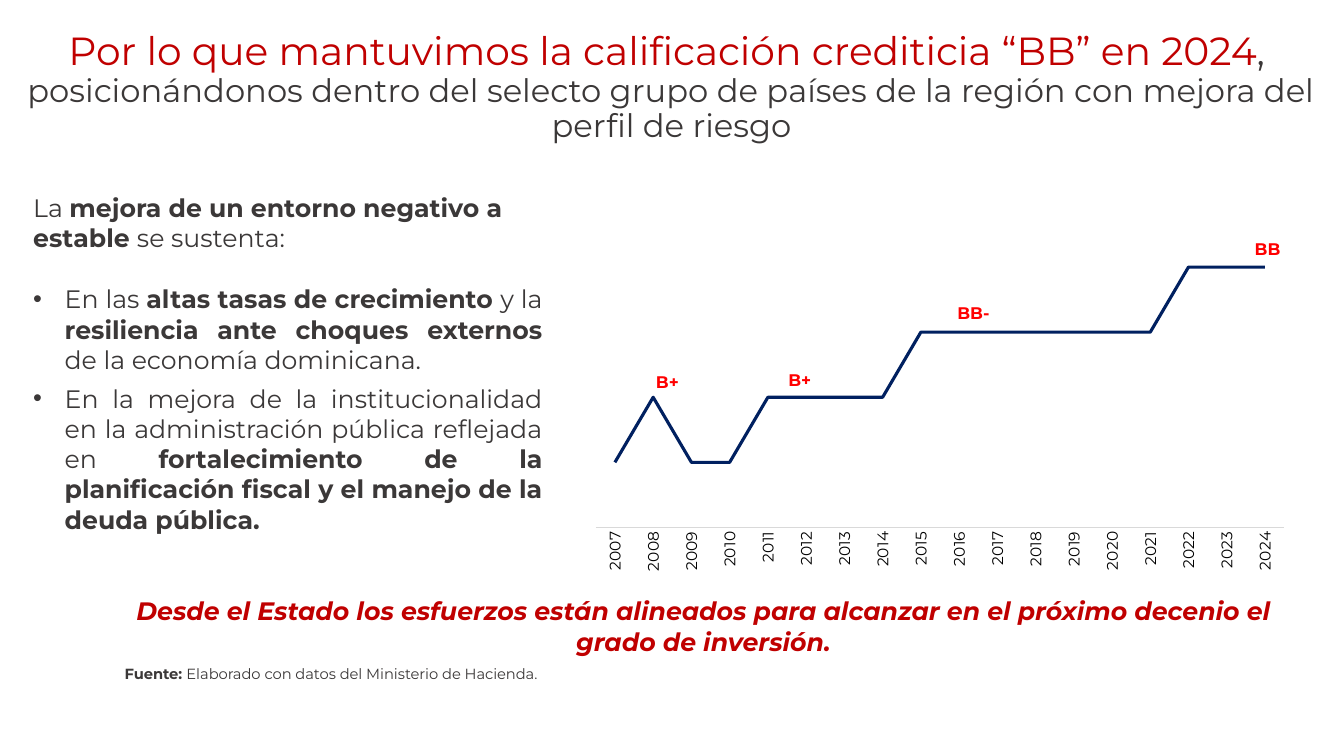
from lxml import etree
from pptx import Presentation
from pptx.chart.data import CategoryChartData
from pptx.dml.color import RGBColor
from pptx.enum import chart as ch
from pptx.enum.text import PP_ALIGN
from pptx.oxml import ns
from pptx.util import Pt

FONT = "Montserrat"
COLORS = {"crimson": "C00000", "gray": "3B3838", "red": "FF0000",
          "navy": "002060", "axis": "D9D9D9", "black": "000000"}


def rgb(name):
    return RGBColor.from_string(COLORS[name])


def add_text(box, paragraphs, size, color, align=None, bold=None, italic=None):
    """Add a text box; each paragraph is a list of (text, bold) runs."""
    frame = slide.shapes.add_textbox(*map(Pt, box)).text_frame
    frame.word_wrap = True
    for i, runs in enumerate(paragraphs):
        paragraph = frame.paragraphs[0] if i == 0 else frame.add_paragraph()
        paragraph.alignment = align
        font = paragraph.font
        font.name, font.size, font.bold, font.italic = FONT, Pt(size), bold, italic
        font.color.rgb = rgb(color)
        for content, run_bold in runs:
            run = paragraph.add_run()
            run.text = content
            if run_bold:
                run.font.bold = True
    return frame


prs = Presentation()
prs.slide_width, prs.slide_height = Pt(960), Pt(540)
slide = prs.slides.add_slide(prs.slide_layouts[6])

# Title
title = add_text((8.6, 19.4, 942.5, 61.2), [
    [("Por lo que mantuvimos la calificación crediticia “BB” en 2024", False), (", ", False)],
    [("posicionándonos dentro del selecto grupo de países de la región "
      "con mejora del perfil de riesgo", False)],
], 23, "gray", PP_ALIGN.CENTER)
for paragraph in title.paragraphs:
    paragraph.line_spacing = 0.9
headline = title.paragraphs[0]
headline.font.size = Pt(28)
headline.runs[0].font.color.rgb = rgb("crimson")

# Source and reasons
add_text((82, 471.6, 744.5, 20.2), [
    [("Fuente: ", True), ("Elaborado con datos del Ministerio de Hacienda.", False)],
], 10.5, "gray")

reasons = add_text((16.6, 133.9, 378, 253.4), [
    [("La ", False), ("mejora de un entorno negativo a estable ", True), ("se sustenta:", False)],
    [("En las ", False), ("altas tasas de crecimiento ", True), ("y la ", False),
     ("resiliencia ante choques externos ", True), ("de la economía dominicana.", False)],
    [("En la mejora de la institucionalidad en la administración pública reflejada en", False),
     (" fortalecimiento de la planificación fiscal y el manejo de la deuda pública.", True)],
], 18, "gray")
for paragraph in reasons.paragraphs[1:]:
    paragraph.alignment = PP_ALIGN.JUSTIFY
    properties = paragraph._p.get_or_add_pPr()
    properties.set("marL", str(Pt(22.5)))
    properties.set("indent", str(-Pt(22.5)))
    bullet_font = etree.Element(ns.qn("a:buFont"), typeface="Arial")
    bullet = etree.Element(ns.qn("a:buChar"), char="•")
    properties.find(ns.qn("a:defRPr")).addprevious(bullet_font)
    bullet_font.addnext(bullet)
reasons.paragraphs[1].space_before = Pt(22)
reasons.paragraphs[1].space_after = Pt(6)

add_text((64, 421.9, 877, 51.1), [
    [("Desde el Estado los esfuerzos están alineados para alcanzar "
      "en el próximo decenio el grado de inversión.", False)],
], 18, "crimson", PP_ALIGN.CENTER, True, True)

# Credit rating by year
ratings = CategoryChartData()
ratings.categories = [str(year) for year in range(2007, 2025)]
ratings.add_series("Series 1", [25, 50] + [25] * 2 + [50] * 4 + [75] * 7 + [100] * 3)
chart = slide.shapes.add_chart(ch.XL_CHART_TYPE.LINE, Pt(419), Pt(92.2), Pt(509), Pt(329.8),
                               ratings).chart
chart.has_legend = chart.has_title = False
chart.font.name, chart.font.size = FONT, Pt(11)
chart.font.color.rgb = rgb("black")
chart.plots[0].vary_by_categories = False

rating_line = chart.plots[0].series[0]
rating_line.smooth = False
rating_line.marker.style = ch.XL_MARKER_STYLE.NONE
rating_line.format.line.color.rgb = rgb("navy")
rating_line.format.line.width = Pt(2.25)

levels = chart.value_axis
levels.minimum_scale, levels.maximum_scale, levels.major_unit = 0, 125, 25
levels.has_major_gridlines = levels.visible = False

years = chart.category_axis
years.major_tick_mark = ch.XL_TICK_MARK.NONE
years.format.line.color.rgb = rgb("axis")
years.format.line.width = Pt(0.75)
years.tick_labels.font.name, years.tick_labels.font.size = FONT, Pt(11)
years.tick_labels.font.color.rgb = rgb("black")
label_body = years._element.find(ns.qn("c:txPr")).find(ns.qn("a:bodyPr"))
label_body.set("rot", "-5400000")
label_body.set("vert", "horz")

plot_area = chart._chartSpace.chart.plotArea
for layout in plot_area.findall(ns.qn("c:layout")):
    plot_area.remove(layout)
layout = etree.Element(ns.qn("c:layout"))
manual = etree.SubElement(layout, ns.qn("c:manualLayout"))
for tag, value in (("layoutTarget", "inner"), ("xMode", "edge"), ("yMode", "edge"),
                   ("x", "0.013"), ("y", "0.158"), ("w", "0.966"), ("h", "0.705")):
    etree.SubElement(manual, ns.qn(f"c:{tag}"), val=value)
plot_area.insert(0, layout)

for rating, left, top, width in (("B+", 461.5, 262, 44), ("B+", 556, 260.6, 44),
                                 ("BB-", 676.8, 212.4, 52.6), ("BB", 889.2, 167, 39)):
    add_text((left, top, width, 21.6), [[(rating, False)]], 12, "red", bold=True)

prs.save("out.pptx")
